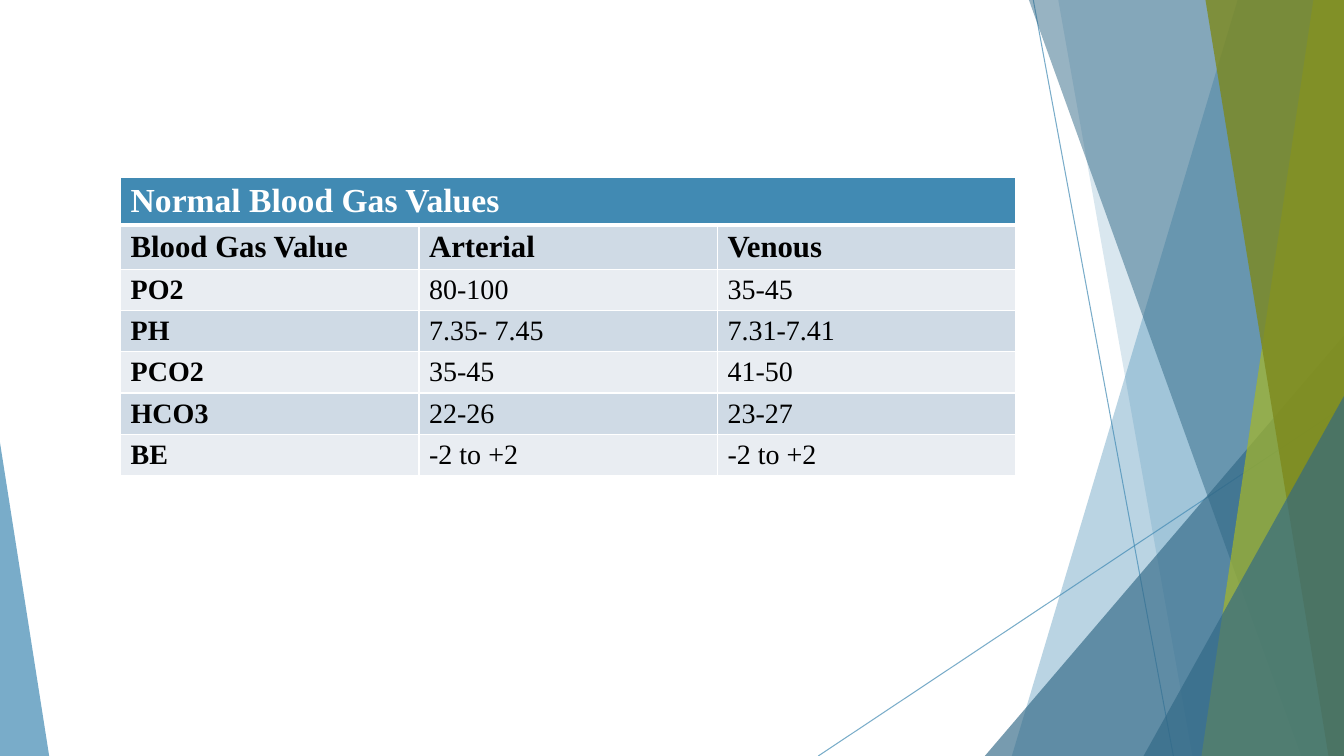
import dataclasses

import pptx
import pptx.dml.color
import pptx.enum.shapes
import pptx.oxml
import pptx.oxml.ns
import pptx.util
from pptx.util import Cm, Pt

COLOURS = {
    "blue": "418AB3",
    "navy": "316886",
    "lime": "A6B727",
    "olive": "7D891D",
    "band": "CFDAE5",
    "pale": "E9EDF2",
    "white": "FFFFFF",
    "black": "000000",
}
FONT = "Times New Roman"
TITLE = "Normal Blood Gas Values"
HEADINGS = ["Blood Gas Value", "Arterial", "Venous"]
VALUES = [
    ["PO2", "80-100", "35-45"],
    ["PH", "7.35- 7.45", "7.31-7.41"],
    ["PCO2", "35-45", "41-50"],
    ["HCO3", "22-26", "23-27"],
    ["BE", "-2 to +2", "-2 to +2"],
]


@dataclasses.dataclass
class Box:
    left: int
    top: int
    width: int
    height: int

    @property
    def right(self):
        return self.left + self.width

    @property
    def bottom(self):
        return self.top + self.height


def colour(name):
    return pptx.dml.color.RGBColor.from_string(COLOURS[name])


def set_opacity(shape, percent):
    for node in shape.element.spPr.xpath(".//a:srgbClr"):
        alpha = pptx.oxml.parse_xml(
            f'<a:alpha {pptx.oxml.ns.nsdecls("a")} val="{percent * 1000}"/>')
        node.append(alpha)


def paint(shape, fill, opacity):
    shape.shadow.inherit = False
    shape.line.fill.background()
    shape.fill.solid()
    shape.fill.fore_color.rgb = colour(fill)
    set_opacity(shape, opacity)


def add_ray(page, start, end):
    ray = page.shapes.add_connector(
        pptx.enum.shapes.MSO_CONNECTOR.STRAIGHT, *start, *end)
    ray.line.color.rgb = colour("blue")
    ray.line.width = Pt(0.75)
    set_opacity(ray, 70)
    ray.element.spPr.append(pptx.oxml.parse_xml(
        f'<a:effectLst {pptx.oxml.ns.nsdecls("a")}/>'))


def add_facet(page, box, top_inset, bottom_inset, fill, opacity):
    """Fill from a slanted left edge to the right side of the box."""
    outline = page.shapes.build_freeform(box.right - Cm(top_inset), box.top)
    outline.add_line_segments([
        (box.right, box.top),
        (box.right, box.bottom),
        (box.right - Cm(bottom_inset), box.bottom),
    ])
    paint(outline.convert_to_shape(), fill, opacity)


def add_corner(page, box, width, height, fill, opacity, at_right=True):
    """Place a right-angled triangle in a bottom corner of the box."""
    left = box.right - Cm(width) if at_right else box.left
    corner = page.shapes.add_shape(
        pptx.enum.shapes.MSO_SHAPE.ISOSCELES_TRIANGLE,
        left, box.bottom - Cm(height), Cm(width), Cm(height))
    corner.adjustments[0] = 1 if at_right else 0
    paint(corner, fill, opacity)


def add_backdrop(page, box):
    add_ray(page, (box.right - Cm(7.83), box.top),
            (box.right - Cm(4.3), box.bottom))
    add_ray(page, (box.right, box.top + Cm(10.24)),
            (box.right - Cm(13.25), box.bottom))
    add_facet(page, box, 2.68, 8.37, "blue", 36)
    add_facet(page, box, 7.2, 3.82, "blue", 20)
    add_corner(page, box, 9.05, 10.59, "navy", 66)
    add_facet(page, box, 7.94, 1.08, "navy", 50)
    add_facet(page, box, 0.77, 3.59, "lime", 70)
    add_facet(page, box, 3.49, 0.39, "olive", 80)
    add_corner(page, box, 5.05, 9.07, "navy", 66)
    add_corner(page, box, 1.24, 7.9, "blue", 70, at_right=False)


def style_cell(cell, fill, size, bold, ink, top_line, bottom_line):
    sides = {"L": 1, "R": 1, "T": top_line, "B": bottom_line}
    properties = cell._tc.get_or_add_tcPr()
    for side, points in sides.items():
        properties.append(pptx.oxml.parse_xml(
            f'<a:ln{side} {pptx.oxml.ns.nsdecls("a")} w="{Pt(points)}">'
            f'<a:solidFill><a:srgbClr val="{COLOURS["white"]}"/></a:solidFill>'
            f'</a:ln{side}>'))
    cell.fill.solid()
    cell.fill.fore_color.rgb = colour(fill)
    font = cell.text_frame.paragraphs[0].font
    font.name = FONT
    font.size = Pt(size)
    font.bold = bold
    font.color.rgb = colour(ink)


def add_values_table(page, box):
    rows = [[TITLE, "", ""], HEADINGS, *VALUES]
    table = page.shapes.add_table(
        len(rows), len(HEADINGS),
        box.left, box.top, box.width, box.height).table
    table.first_row = table.horz_banding = False
    table.cell(0, 0).merge(table.cell(0, len(HEADINGS) - 1))
    sizes = [24, 22] + [20] * len(VALUES)
    for row, texts in enumerate(rows):
        table.rows[row].height = Cm(1.04)
        fill = "blue" if row == 0 else "band" if row % 2 else "pale"
        for column, text in enumerate(texts):
            cell = table.cell(row, column)
            if text:
                cell.text = text
            style_cell(cell, fill, sizes[row],
                       bold=row < 2 or column == 0,
                       ink="white" if row == 0 else "black",
                       top_line=3 if row == 1 else 1,
                       bottom_line=3 if row == 0 else 1)


def main():
    deck = pptx.Presentation()
    deck.slide_width, deck.slide_height = Cm(33.87), Cm(19.05)
    page = deck.slides.add_slide(deck.slide_layouts[6])
    add_backdrop(page, Box(0, 0, deck.slide_width, deck.slide_height))
    add_values_table(page, Box(Cm(3.04), Cm(4.48), Cm(22.56), Cm(7.28)))
    deck.save("out.pptx")


if __name__ == "__main__":
    main()
